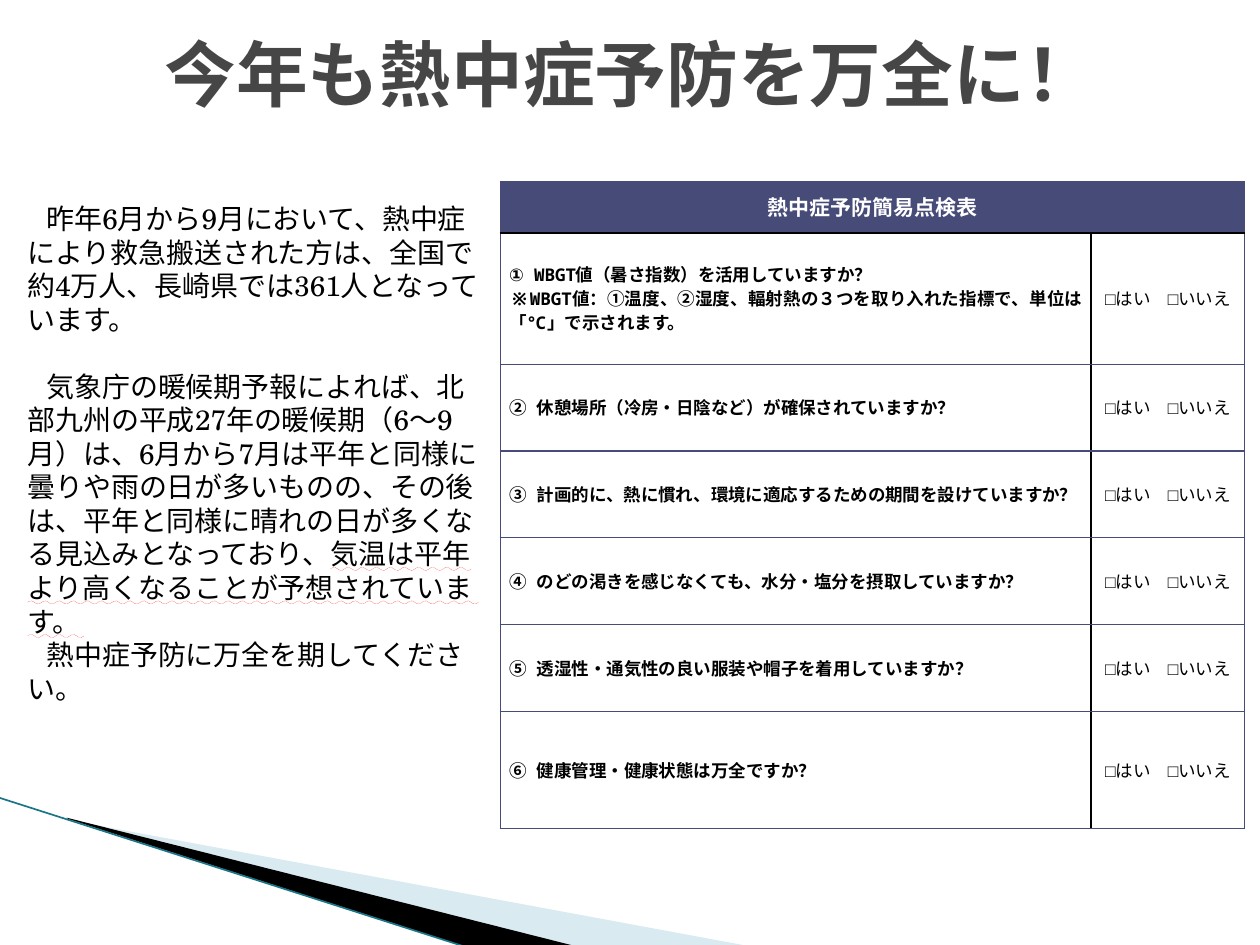
import pptx
import pptx.util
import pptx.dml.color
import pptx.enum.text
import pptx.oxml
import pptx.oxml.ns
from lxml import etree

Inches = pptx.util.Inches
Pt = pptx.util.Pt
qn = pptx.oxml.ns.qn
ALIGN = pptx.enum.text.PP_ALIGN
MIDDLE = pptx.enum.text.MSO_ANCHOR.MIDDLE
SANS, SERIF = "Noto Sans Mono", "TeX Gyre Schola"
PURPLE, BLACK, WHITE = "474B78", "000000", "FFFFFF"


def rgb(color):
    return pptx.dml.color.RGBColor.from_string(color)


def add_run(p, text, size, face, color, bold=False):
    r = p.add_run()
    r.text = text
    r.font.size = Pt(size)
    r.font.bold = bold
    r.font.name = face
    r.font.color.rgb = rgb(color)
    etree.SubElement(r.font._element, qn("a:ea"), typeface=face)
    return r


prs = pptx.Presentation()
prs.slide_width, prs.slide_height = Inches(10), Inches(7.5)
s = prs.slides.add_slide(prs.slide_layouts[5])

wedges = [
    ("A0CBDC", 40, [(0.55, 6.51), (5.95, 7.51), (4.56, 7.51), (0.55, 6.5)]),
    (BLACK, 100, [(0.53, 6.49), (4.57, 7.51), (3.72, 7.52), (0.54, 6.5)]),
]
for color, alpha, points in wedges:
    points = [(Inches(x), Inches(y)) for x, y in points]
    fb = s.shapes.build_freeform(*points[0])
    fb.add_line_segments(points[1:], close=True)
    sp = fb.convert_to_shape()
    sp.shadow.inherit = False
    sp.line.fill.background()
    sp.fill.solid()
    sp.fill.fore_color.rgb = rgb(color)
    if alpha < 100:
        clr = sp._element.spPr.find(qn("a:solidFill"))[0]
        etree.SubElement(clr, qn("a:alpha"), val=str(alpha * 1000))

edge = s.shapes.add_connector(1, Inches(-0.01), Inches(6.33), Inches(3.71), Inches(7.52))
edge.line.color.rgb = rgb("1B7587")
edge.line.width = Pt(0.95)
etree.SubElement(edge._element.spPr, qn("a:effectLst"))

questions = [
    ["① WBGT値（暑さ指数）を活用していますか？",
     "※WBGT値：①温度、②湿度、輻射熱の３つを取り入れた指標で、単位は「℃」で示されます。"],
    ["② 休憩場所（冷房・日陰など）が確保されていますか？"],
    ["③ 計画的に、熱に慣れ、環境に適応するための期間を設けていますか？"],
    ["④ のどの渇きを感じなくても、水分・塩分を摂取していますか？"],
    ["⑤ 透湿性・通気性の良い服装や帽子を着用していますか？"],
    ["⑥ 健康管理・健康状態は万全ですか？"],
]
heights = [0.41, 1.04, 0.69, 0.69, 0.69, 0.69, 0.93]
table = s.shapes.add_table(7, 2, Inches(3.97), Inches(1.44), Inches(5.91), Inches(5.14)).table
table.columns[0].width = Inches(4.69)
table.columns[1].width = Inches(1.22)
for row, height in zip(table.rows, heights):
    row.height = Inches(height)
table.cell(0, 0).merge(table.cell(0, 1))

for i in range(7):
    for j in range(2):
        cell = table.cell(i, j)
        cell.vertical_anchor = MIDDLE
        cell.margin_left = cell.margin_right = Inches(0.07)
        cell.margin_top = cell.margin_bottom = 0
        black_sides = {"R" if j == 0 else "L"} if i else {"B"}
        if i == 1:
            black_sides.add("T")
        tcPr = cell._tc.get_or_add_tcPr()
        for side in "LRTB":
            color, width = (BLACK, 1) if side in black_sides else (PURPLE, 0.75)
            ln = etree.SubElement(tcPr, qn("a:ln" + side), w=str(Pt(width)))
            fill = etree.SubElement(ln, qn("a:solidFill"))
            etree.SubElement(fill, qn("a:srgbClr"), val=color)
        cell.fill.solid()
        cell.fill.fore_color.rgb = rgb(WHITE if i else PURPLE)
        if cell.is_spanned:
            continue
        tf = cell.text_frame
        if i == 0:
            lines, size, color, align = ["熱中症予防簡易点検表"], 12, WHITE, ALIGN.CENTER
        elif j == 0:
            lines, size, color, align = questions[i - 1], 10, BLACK, ALIGN.JUSTIFY
        else:
            lines, size, color, align = ["□はい　□いいえ"], 10, BLACK, ALIGN.CENTER
        for n, line in enumerate(lines):
            p = tf.add_paragraph() if n else tf.paragraphs[0]
            p.alignment = align
            add_run(p, line, size, SANS, color, bold=j == 0)

paragraphs = [
    (0, [("昨年6月から9月において、熱中症により救急搬送された方は、全国で約4万人、長崎県では361人となっています。", False)]),
    (19, [("気象庁の暖候期予報によれば、北部九州の平成27年の暖候期（6～9月）は、6月から7月は平年と同様に曇りや雨の日が多いものの、その後は、平年と同様に晴れの日が多くなる見込みとなっており、", False),
          ("気温は平年より高くなることが予想されています。", True)]),
    (0, [("熱中症予防に万全を期してください。", False)]),
]
tf = s.shapes.add_textbox(Inches(0.12), Inches(1.55), Inches(3.78), Inches(4.61)).text_frame
tf.word_wrap = True
for n, (gap, runs) in enumerate(paragraphs):
    p = tf.add_paragraph() if n else tf.paragraphs[0]
    p.space_before = Pt(gap)
    p._p.get_or_add_pPr().set("indent", str(Inches(0.15)))
    for text, wavy in runs:
        r = add_run(p, text, 16, SERIF, BLACK)
        if wavy:
            r.font.underline = pptx.enum.text.MSO_UNDERLINE.WAVY_LINE
            line_fill = etree.Element(qn("a:uFill"))
            fill = etree.SubElement(line_fill, qn("a:solidFill"))
            etree.SubElement(fill, qn("a:srgbClr"), val="FF0000")
            r.font._element.find(qn("a:latin")).addprevious(line_fill)

title = s.shapes.title
title.left, title.top, title.width, title.height = Inches(0.51), 0, Inches(9), Inches(1.15)
tf = title.text_frame
tf.vertical_anchor = MIDDLE
tf.auto_size = pptx.enum.text.MSO_AUTO_SIZE.NONE
p = tf.paragraphs[0]
p.alignment = ALIGN.CENTER
add_run(p, "今年も熱中症予防を万全に！", 41, SANS, "464646", bold=True)

prs.save("out.pptx")
